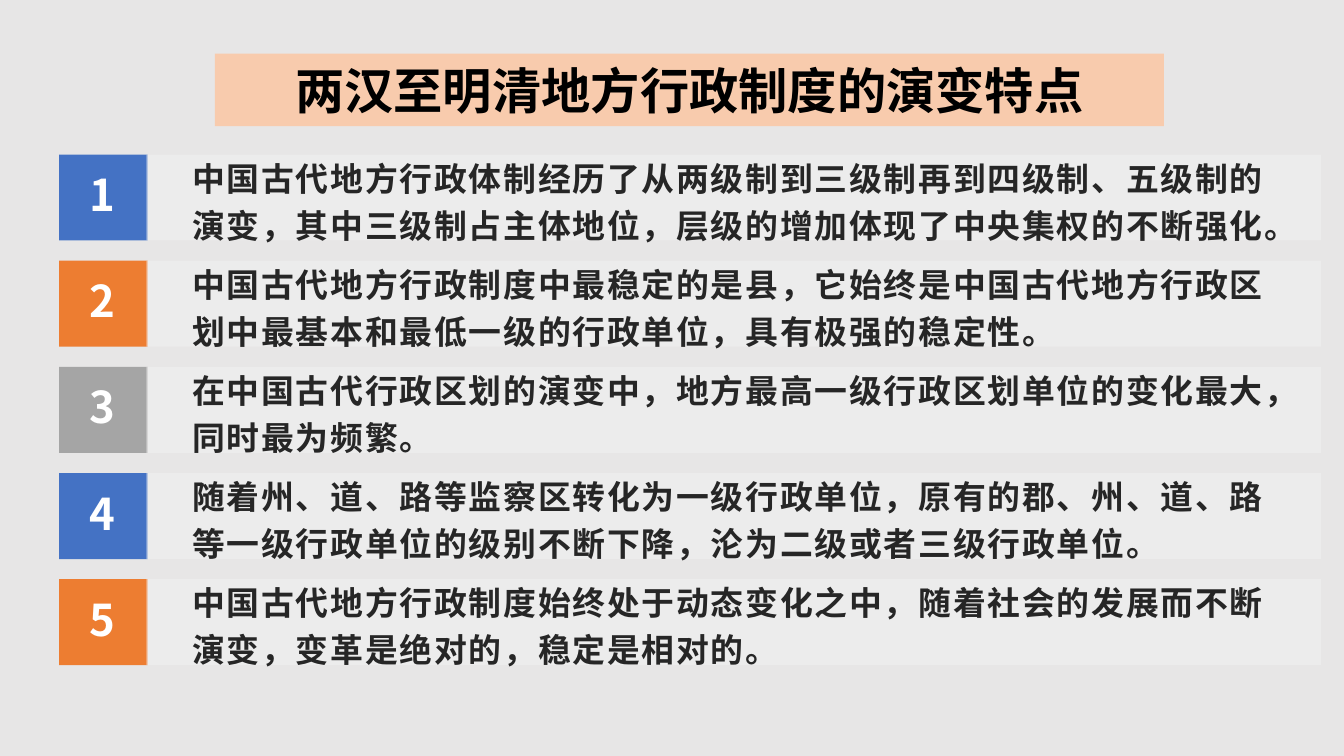
from lxml.etree import SubElement
from pptx import Presentation
from pptx.dml.color import RGBColor
from pptx.enum.shapes import MSO_SHAPE
from pptx.enum.text import MSO_ANCHOR, PP_ALIGN
from pptx.oxml.ns import qn
from pptx.util import Inches, Pt

FONT = "Noto Sans CJK SC"
BACKGROUND = RGBColor(0xE7, 0xE6, 0xE6)
PEACH = RGBColor(0xF8, 0xCB, 0xAD)
BLUE = RGBColor(0x44, 0x72, 0xC4)
ORANGE = RGBColor(0xED, 0x7D, 0x31)
GRAY = RGBColor(0xA5, 0xA5, 0xA5)
PALE = RGBColor(0xF2, 0xF2, 0xF2)
BLACK = RGBColor(0, 0, 0)
DARK = RGBColor(0x26, 0x26, 0x26)
WHITE = RGBColor(0xFF, 0xFF, 0xFF)

TITLE = "两汉至明清地方行政制度的演变特点"
POINTS = [
    (BLUE, 0.92, "中国古代地方行政体制经历了从两级制到三级制再到四级制、五级制的演变，其中三级制占主体地位，层级的增加体现了中央集权的不断强化。"),
    (ORANGE, 0.46, "中国古代地方行政制度中最稳定的是县，它始终是中国古代地方行政区划中最基本和最低一级的行政单位，具有极强的稳定性。"),
    (GRAY, 0.46, "在中国古代行政区划的演变中，地方最高一级行政区划单位的变化最大，同时最为频繁。"),
    (BLUE, 0.46, "随着州、道、路等监察区转化为一级行政单位，原有的郡、州、道、路等一级行政单位的级别不断下降，沦为二级或者三级行政单位。"),
    (ORANGE, 0.46, "中国古代地方行政制度始终处于动态变化之中，随着社会的发展而不断演变，变革是绝对的，稳定是相对的。"),
]
FIRST_TOP = 1.15
ROW_STEP = 0.79
ROW_HEIGHT = 0.64


def add_rectangle(slide, left, top, width, height, color, opacity=100):
    shape = slide.shapes.add_shape(
        MSO_SHAPE.RECTANGLE, Inches(left), Inches(top), Inches(width), Inches(height))
    shape.shadow.inherit = False
    shape.fill.solid()
    shape.fill.fore_color.rgb = color
    shape.line.fill.background()
    if opacity < 100:
        color_element = shape.fill._xPr.find(qn("a:solidFill"))[0]
        SubElement(color_element, qn("a:alpha"), val=str(opacity * 1000))
    return shape


def add_text_box(slide, left, top, width, height):
    return slide.shapes.add_textbox(
        Inches(left), Inches(top), Inches(width), Inches(height))


def write_text(shape, text, size, color, align=PP_ALIGN.LEFT, anchor=MSO_ANCHOR.TOP,
               line_spacing=None, letter_spacing=0, margins=(0.1, 0.05)):
    frame = shape.text_frame
    frame.word_wrap = True
    frame.vertical_anchor = anchor
    frame.margin_left = frame.margin_right = Inches(margins[0])
    frame.margin_top = frame.margin_bottom = Inches(margins[1])
    paragraph = frame.paragraphs[0]
    paragraph.alignment = align
    paragraph.line_spacing = line_spacing
    run = paragraph.add_run()
    run.text = text
    run.font.size = Pt(size)
    run.font.bold = True
    run.font.color.rgb = color
    run.font.name = FONT
    properties = run._r.get_or_add_rPr()
    SubElement(properties, qn("a:ea"), typeface=FONT)
    if letter_spacing:
        properties.set("spc", str(round(letter_spacing * 100)))


def add_point(slide, number, color, text_height, text):
    top = FIRST_TOP + (number - 1) * ROW_STEP
    text_top = top + (ROW_HEIGHT - text_height) / 2
    add_rectangle(slide, 0.44, top, 0.66, ROW_HEIGHT, color)
    add_rectangle(slide, 1.09, top, 8.74, ROW_HEIGHT, PALE, opacity=50)
    write_text(add_text_box(slide, 1.36, text_top, 8.21, text_height), text,
               size=17.6, color=DARK, anchor=MSO_ANCHOR.MIDDLE,
               line_spacing=1.2, letter_spacing=0.9, margins=(0.07, 0.04))
    write_text(add_text_box(slide, 0.57, top + 0.05, 0.39, 0.53), str(number),
               size=23.4, color=WHITE)


def main():
    presentation = Presentation()
    presentation.slide_width = Inches(10)
    presentation.slide_height = Inches(10 * 9 / 16)
    slide = presentation.slides.add_slide(presentation.slide_layouts[6])
    slide.background.fill.solid()
    slide.background.fill.fore_color.rgb = BACKGROUND

    title = add_rectangle(slide, 1.6, 0.4, 7.06, 0.54, PEACH)
    write_text(title, TITLE, size=26.4, color=BLACK,
               align=PP_ALIGN.CENTER, anchor=MSO_ANCHOR.MIDDLE)
    for number, (color, text_height, text) in enumerate(POINTS, start=1):
        add_point(slide, number, color, text_height, text)

    presentation.save("out.pptx")


if __name__ == "__main__":
    main()
